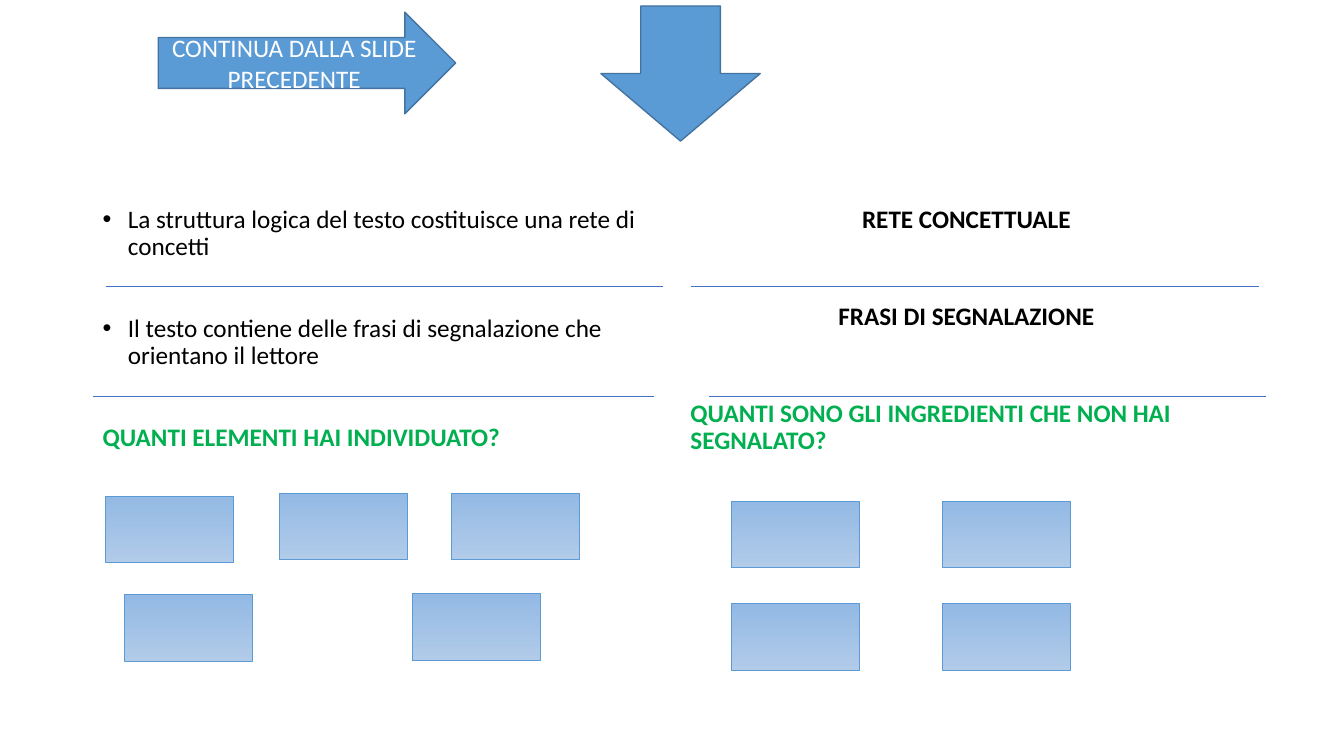
"""Build the slide on concept networks and signalling phrases."""
from dataclasses import dataclass

from lxml import etree
from pptx import Presentation
from pptx.dml.color import RGBColor
from pptx.enum.shapes import MSO_CONNECTOR, MSO_SHAPE
from pptx.enum.text import MSO_ANCHOR, PP_ALIGN
from pptx.oxml.ns import qn
from pptx.util import Inches, Pt

LEFT, CENTER = PP_ALIGN.LEFT, PP_ALIGN.CENTER
MIDDLE = MSO_ANCHOR.MIDDLE
RECTANGLE = MSO_SHAPE.RECTANGLE
DOWN_ARROW, RIGHT_ARROW = MSO_SHAPE.DOWN_ARROW, MSO_SHAPE.RIGHT_ARROW
STRAIGHT = MSO_CONNECTOR.STRAIGHT


@dataclass(frozen=True)
class Theme:
    font: str = "Calibri"
    size: int = 18
    ink: str = "000000"
    question: str = "00B050"
    white: str = "FFFFFF"
    rule: str = "4472C4"
    arrow: str = "5B9BD5"
    arrow_edge: str = "43739E"
    answer_top: str = "93B9E4"
    answer_bottom: str = "B1CBE9"


THEME = Theme()

COLUMNS = [
    {"left": 0.92, "gap": 39, "lines": [
        ("La struttura logica del testo costituisce una rete di concetti", "bullet"),
        ("Il testo contiene delle frasi di segnalazione che orientano il lettore", "bullet"),
        ("QUANTI ELEMENTI HAI INDIVIDUATO?", "question"),
    ]},
    {"left": 6.75, "gap": 50, "lines": [
        ("RETE CONCETTUALE", "heading"),
        ("FRASI DI SEGNALAZIONE", "heading"),
        ("QUANTI SONO GLI INGREDIENTI CHE NON HAI SEGNALATO?", "question"),
    ]},
]
COLUMN_TOP, COLUMN_WIDTH, COLUMN_HEIGHT = 2, 5.67, 4.76

RULES = [
    (2.84, [(1.05, 6.58), (6.85, 12.49)]),
    (3.93, [(0.92, 6.49), (7.03, 12.56)]),
]

ARROWS = [
    (DOWN_ARROW, (5.96, 0.06, 1.58, 1.34), ""),
    (RIGHT_ARROW, (1.57, 0.12, 2.95, 1.01), "CONTINUA DALLA SLIDE PRECEDENTE"),
]

ANSWER_SIZE = (1.27, 0.66)
FOUND_ANSWERS = [(1.05, 4.92), (2.77, 4.89), (4.48, 4.89), (1.23, 5.9), (4.09, 5.89)]
MISSED_ANSWERS = [(left, top) for top in (4.97, 5.99) for left in (7.25, 9.35)]


def rgb(value):
    return RGBColor.from_string(value)


def style_text(para, color, bold=False):
    for span in para.runs:
        span.font.name = THEME.font
        span.font.size = Pt(THEME.size)
        span.font.bold = bold
        span.font.color.rgb = rgb(color)


def add_bullet(para):
    properties = para._p.get_or_add_pPr()
    properties.set("marL", str(Inches(0.25)))
    properties.set("indent", str(Inches(-0.25)))
    etree.SubElement(properties, qn("a:buFont")).set("typeface", "Arial")
    etree.SubElement(properties, qn("a:buChar")).set("char", "•")


def add_column(page, left, gap, lines):
    box = page.shapes.add_textbox(
        Inches(left), Inches(COLUMN_TOP), Inches(COLUMN_WIDTH), Inches(COLUMN_HEIGHT))
    frame = box.text_frame
    frame.word_wrap = True
    frame.text = "\n".join(text for text, role in lines)
    for index, (para, (text, role)) in enumerate(zip(frame.paragraphs, lines)):
        para.line_spacing = 0.9
        para.space_before = Pt(gap if index else 0)
        para.alignment = CENTER if role == "heading" else LEFT
        color = THEME.question if role == "question" else THEME.ink
        style_text(para, color, bold=role != "bullet")
        if role == "bullet":
            add_bullet(para)


def add_rule(page, start, end, height):
    line = page.shapes.add_connector(
        STRAIGHT, Inches(start), Inches(height), Inches(end), Inches(height))
    line.line.color.rgb = rgb(THEME.rule)
    line.line.width = Pt(0.5)
    etree.SubElement(line._element.spPr, qn("a:effectLst"))


def add_outlined(page, kind, place, edge, width):
    shape = page.shapes.add_shape(kind, *map(Inches, place))
    shape.shadow.inherit = False
    shape.line.color.rgb = rgb(edge)
    shape.line.width = Pt(width)
    return shape


def add_arrow(page, kind, place, text):
    arrow = add_outlined(page, kind, place, THEME.arrow_edge, 1)
    arrow.fill.solid()
    arrow.fill.fore_color.rgb = rgb(THEME.arrow)
    if text:
        frame = arrow.text_frame
        frame.text = text
        frame.vertical_anchor = MIDDLE
        frame.paragraphs[0].alignment = CENTER
        style_text(frame.paragraphs[0], THEME.white)


def add_answer(page, left, top):
    answer = add_outlined(page, RECTANGLE, (left, top, *ANSWER_SIZE), THEME.arrow, 0.5)
    answer.fill.gradient()
    answer.fill.gradient_angle = 270
    shades = (THEME.answer_top, THEME.answer_bottom)
    for stop, position, shade in zip(answer.fill.gradient_stops, (0, 1), shades):
        stop.position = position
        stop.color.rgb = rgb(shade)


def main():
    deck = Presentation()
    deck.slide_width, deck.slide_height = Inches(13.33), Inches(7.5)
    page = deck.slides.add_slide(deck.slide_layouts[6])
    for column in COLUMNS:
        add_column(page, **column)
    for height, spans in RULES:
        for start, end in spans:
            add_rule(page, start, end, height)
    for kind, place, text in ARROWS:
        add_arrow(page, kind, place, text)
    for left, top in FOUND_ANSWERS + MISSED_ANSWERS:
        add_answer(page, left, top)
    deck.save("out.pptx")


if __name__ == "__main__":
    main()
